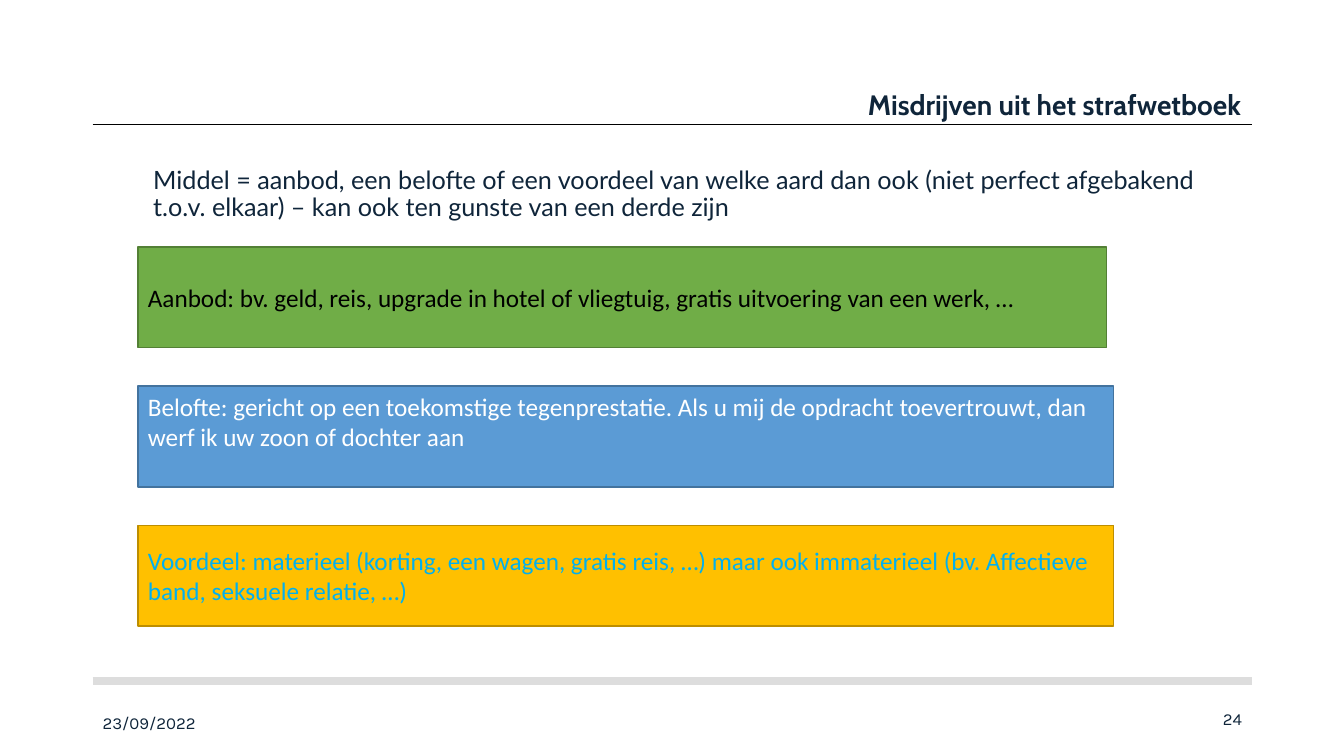
from lxml import etree
from pptx import Presentation
from pptx.dml.color import RGBColor
from pptx.enum import shapes as es, text as et
from pptx.oxml.ns import qn
from pptx.util import Pt

HUES = {
    "ink": "0F253A", "black": "000000", "white": "FFFFFF", "grey": "DDDDDD",
    "green": "70AD47", "moss": "538035", "blue": "5B9BD5", "navy": "43739E",
    "gold": "FFC000", "ochre": "BD8E00", "cyan": "00B0F0",
}
MID, TOP = et.MSO_ANCHOR.MIDDLE, et.MSO_ANCHOR.TOP
LEFT, RIGHT = et.PP_ALIGN.LEFT, et.PP_ALIGN.RIGHT

TITLE = "Misdrijven uit het strafwetboek"
INTRO = ("Middel = aanbod, een belofte of een voordeel van welke aard dan ook "
         "(niet perfect afgebakend t.o.v. elkaar) – kan ook ten gunste van een derde zijn")
DATE, PAGE = "23/09/2022", "24"
# text, width, fill, edge, text colour, bottom inset
CARDS = [
    ("Aanbod: bv. geld, reis, upgrade in hotel of vliegtuig, gratis uitvoering "
     "van een werk, …", 692, "green", "moss", "black", 3.6),
    ("Belofte: gericht op een toekomstige tegenprestatie. Als u mij de opdracht "
     "toevertrouwt, dan werf ik uw zoon of dochter aan",
     697, "blue", "navy", "white", 25.6),
    ("Voordeel: materieel (korting, een wagen, gratis reis, …) maar ook immaterieel "
     "(bv. Affectieve band, seksuele relatie, …)",
     697, "gold", "ochre", "cyan", 3.6),
]
EDGE, END = 66.24, 894.24
RULES = [(88.7, "black", 0.5), (486.6, "grey", 6)]
CARD_X, CARD_Y, CARD_H, STEP = 98.6, 176.4, 72, 99.4


def hue(name):
    return RGBColor.from_string(HUES[name])


def write(shape, words, font, size, color="ink", align=LEFT, anchor=MID,
          space=1, bold=False):
    frame = shape.text_frame
    frame.word_wrap = True
    frame.vertical_anchor = anchor
    para = frame.paragraphs[0]
    para.alignment = align
    para.line_spacing = space
    run = para.add_run()
    run.text = words
    run.font.name, run.font.size, run.font.bold = font, Pt(size), bold
    run.font.color.rgb = hue(color)
    return frame


def label(slide, box, *args, **opts):
    return write(slide.shapes.add_textbox(*map(Pt, box)), *args, **opts)


def rule(slide, y, color, width):
    line = slide.shapes.add_connector(
        es.MSO_CONNECTOR.STRAIGHT, Pt(EDGE), Pt(y), Pt(END), Pt(y))
    line.line.color.rgb = hue(color)
    line.line.width = Pt(width)
    etree.SubElement(line._element.spPr, qn("a:effectLst"))


def card(slide, y, words, width, fill, edge, color, inset):
    box = slide.shapes.add_shape(
        es.MSO_SHAPE.RECTANGLE, Pt(CARD_X), Pt(y), Pt(width), Pt(CARD_H))
    box.shadow.inherit = False
    box.fill.solid()
    box.fill.fore_color.rgb = hue(fill)
    box.line.color.rgb = hue(edge)
    box.line.width = Pt(1)
    write(box, words, "Calibri", 18, color).margin_bottom = Pt(inset)


def main():
    deck = Presentation()
    deck.slide_width, deck.slide_height = Pt(960), Pt(540)
    slide = deck.slides.add_slide(deck.slide_layouts[6])
    for spec in RULES:
        rule(slide, *spec)
    label(slide, (422, 62, 471.6, 27.4), TITLE, "Cabin", 20,
          align=RIGHT, space=0.9, bold=True)
    intro = label(slide, (EDGE, 116, 828, 50), INTRO, "Lato", 18,
                  anchor=TOP, space=0.9)
    intro.margin_left = Pt(43.2)
    for i, spec in enumerate(CARDS):
        card(slide, CARD_Y + i * STEP, *spec)
    label(slide, (EDGE, 502.6, 216, 27.4), DATE, "Karla", 12)
    label(slide, (END - 216, 502.6, 216, 27.4), PAGE, "Karla", 12,
          align=RIGHT, anchor=TOP)
    deck.save("out.pptx")


if __name__ == "__main__":
    main()
